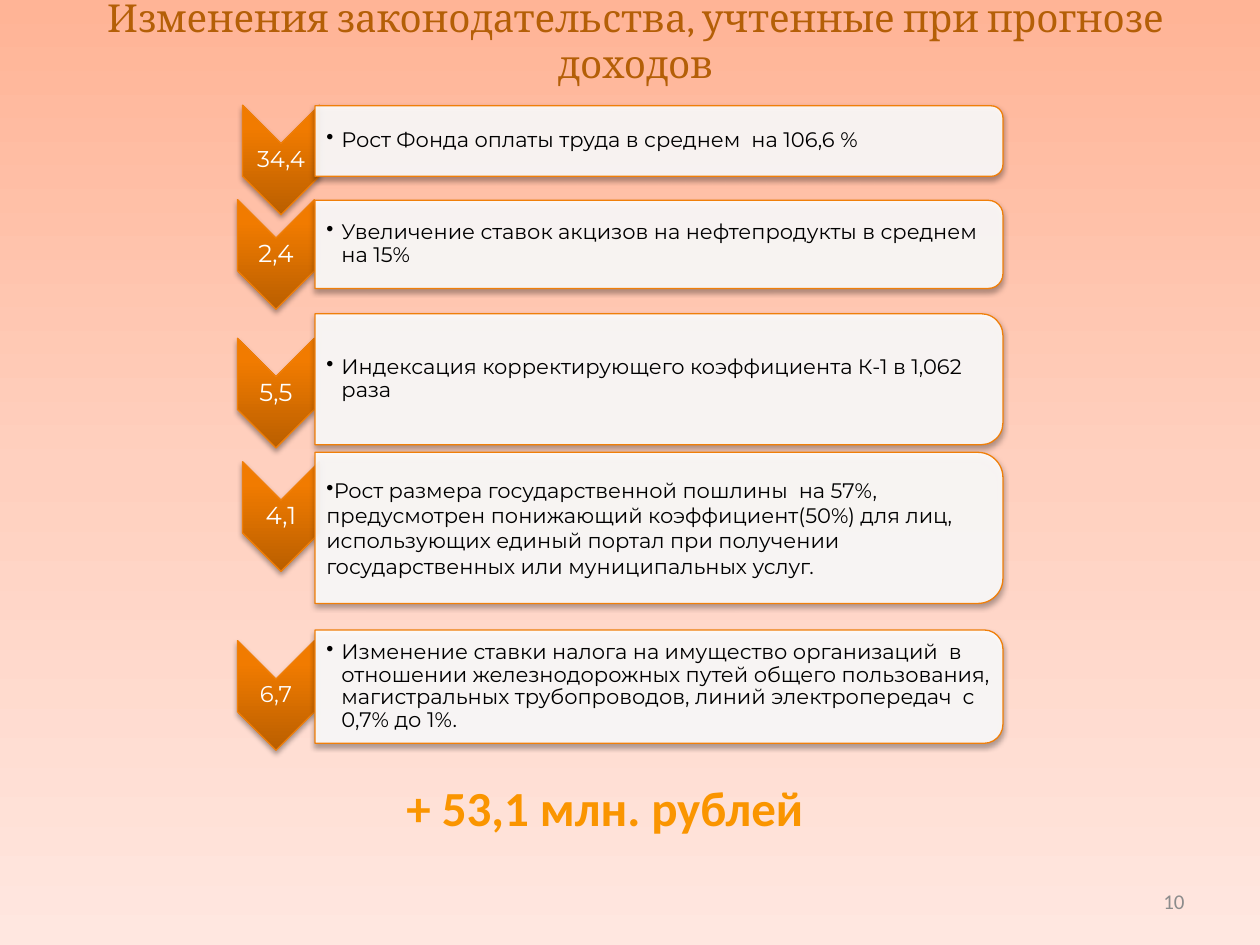
from lxml import etree
from pptx import Presentation
from pptx.dml.color import RGBColor
from pptx.enum.shapes import MSO_SHAPE
from pptx.enum.text import MSO_ANCHOR, PP_ALIGN
from pptx.oxml.ns import qn
from pptx.util import Inches, Pt

CHEVRON, ROUND_BOX = MSO_SHAPE.CHEVRON, MSO_SHAPE.ROUND_2_SAME_RECTANGLE
LEFT, CENTER, RIGHT = PP_ALIGN.LEFT, PP_ALIGN.CENTER, PP_ALIGN.RIGHT
TOP, MIDDLE = MSO_ANCHOR.TOP, MSO_ANCHOR.MIDDLE

ORANGE, WHITE, BLACK = "F07F09", "FFFFFF", "000000"
CHEVRON_STOPS = [(0, "BA5F00"), (80, "F17B00"), (100, "F27C00")]
BACKGROUND_STOPS = [(0, "FFB496"), (50, "FFD0BF"), (100, "FFE7E0")]

CHEVRON_LENGTH, CHEVRON_WIDTH = 0.87, 0.61
BOX_LEFT, BOX_WIDTH = 2.5, 5.46
TIGHT = (0.01, 0.01, 0.01, 0.01)
BOX_INSETS = (0.09, 0.01, 0.01, 0.01)
NORMAL_INSETS = (0.1, 0.05, 0.1, 0.05)

# amount, its size, chevron centre x and y, box centre y, box height, hanging bullet, text
CHANGES = [
    ("34,4", 13, 2.23, 1.27, 1.12, 0.56, True,
     "Рост Фонда оплаты труда в среднем  на 106,6 %"),
    ("2,4", 14, 2.19, 2.02, 1.94, 0.7, True,
     "Увеличение ставок акцизов на нефтепродукты в среднем на 15%"),
    ("5,5", 14, 2.19, 3.12, 3.01, 1.04, True,
     "Индексация корректирующего коэффициента К-1 в 1,062 раза"),
    ("4,1", 14, 2.23, 4.1, 4.19, 1.2, False,
     "Рост размера государственной пошлины  на 57%, предусмотрен понижающий "
     "коэффициент(50%) для лиц,  использующих единый портал при получении "
     "государственных или муниципальных услуг."),
    ("6,7", 13, 2.19, 5.52, 5.45, 0.9, True,
     "Изменение ставки налога на имущество организаций  в отношении "
     "железнодорожных путей общего пользования, магистральных трубопроводов, "
     "линий электропередач  с 0,7% до 1%."),
]


def rgb(color):
    return RGBColor.from_string(color)


def add_xml(parent, tag, **attrs):
    return etree.SubElement(parent, qn(tag), attrs)


def set_gradient(fill, parent, stops, angle):
    """Replace the solid fill under parent with a gradient that ignores rotation."""
    fill.solid()
    solid = parent.find(qn("a:solidFill"))
    grad = etree.Element(qn("a:gradFill"), rotWithShape="0")
    gs_list = add_xml(grad, "a:gsLst")
    for position, color in stops:
        gs = add_xml(gs_list, "a:gs", pos=str(position * 1000))
        add_xml(gs, "a:srgbClr", val=color)
    add_xml(grad, "a:lin", ang=str(angle * 60000), scaled="0")
    parent.replace(solid, grad)


def add_shadow(shape):
    shape.shadow.inherit = False
    effects = shape._element.spPr.find(qn("a:effectLst"))
    shadow = add_xml(effects, "a:outerShdw", blurRad=str(Pt(3.1)), dist=str(Pt(1.8)),
                     dir="5400000", rotWithShape="0")
    add_xml(add_xml(shadow, "a:srgbClr", val=BLACK), "a:alpha", val="35000")


def add_turned_shape(s, kind, cx, cy, width, height):
    """Add a shape turned by 90 degrees; width and height are those before turning."""
    shape = s.shapes.add_shape(kind, Inches(cx - width / 2), Inches(cy - height / 2),
                               Inches(width), Inches(height))
    shape.rotation = 90
    shape.line.color.rgb = rgb(ORANGE)
    shape.line.width = Pt(0.75)
    add_shadow(shape)
    return shape


def write_text(sp, text, size, font, color, align=LEFT, anchor=MIDDLE,
               insets=NORMAL_INSETS, bold=False, spacing=1.0):
    tf = sp.text_frame
    margins = ("margin_left", "margin_top", "margin_right", "margin_bottom")
    frame_format = dict(zip(margins, map(Inches, insets)))
    frame_format.update(word_wrap=True, vertical_anchor=anchor)
    for name, value in frame_format.items():
        setattr(tf, name, value)
    p = tf.paragraphs[0]
    p.alignment, p.line_spacing = align, spacing
    r = p.add_run()
    r.text = text
    for name, value in {"size": Pt(size), "name": font, "bold": bold}.items():
        setattr(r.font, name, value)
    r.font.color.rgb = rgb(color)
    return p


def add_text(s, left, top, width, height, *args, **text_format):
    sp = s.shapes.add_textbox(*map(Inches, (left, top, width, height)))
    return write_text(sp, *args, **text_format)


def add_bullet(p, indent):
    pPr = p._p.get_or_add_pPr()
    pPr.set("marL", str(Inches(indent)))
    pPr.set("indent", str(-Inches(indent)))
    add_xml(pPr, "a:buChar", char="•")


def add_amount(s, amount, size, cx, cy):
    chevron = add_turned_shape(s, CHEVRON, cx, cy, CHEVRON_LENGTH, CHEVRON_WIDTH)
    set_gradient(chevron.fill, chevron._element.spPr, CHEVRON_STOPS, 270)
    add_text(s, cx - CHEVRON_WIDTH / 2, cy - 0.13, CHEVRON_WIDTH, 0.26,
             amount, size, "Montserrat", WHITE, align=CENTER, insets=TIGHT, spacing=0.9)


def add_description(s, text, cy, height, hanging):
    box = add_turned_shape(s, ROUND_BOX, BOX_LEFT + BOX_WIDTH / 2, cy, height, BOX_WIDTH)
    box.fill.solid()
    box.fill.fore_color.rgb = rgb(WHITE)
    color = box._element.spPr.find(qn("a:solidFill"))[0]
    add_xml(color, "a:alpha", val="90000")
    text_height = 0.91 * height
    p = add_text(s, BOX_LEFT, cy - text_height / 2, BOX_WIDTH - 0.05 * height, text_height,
                 text, 12, "Montserrat", BLACK, insets=BOX_INSETS,
                 spacing=0.9 if hanging else 1.0)
    add_bullet(p, 0.12 if hanging else 0)


def add_title(s, text):
    title = s.shapes.title
    title.left, title.top, title.width, title.height = map(Inches, (0.24, 0.13, 9.61, 0.38))
    write_text(title, text, 22, "Cambria", "B45F07", align=CENTER)


def main():
    prs = Presentation()
    prs.slide_width, prs.slide_height = Inches(10), Inches(7.5)
    s = prs.slides.add_slide(prs.slide_layouts[5])
    fill = s.background.fill
    fill.solid()
    set_gradient(fill, s._element.cSld.find(qn("p:bg")).find(qn("p:bgPr")),
                 BACKGROUND_STOPS, 90)

    add_title(s, "Изменения законодательства, учтенные при прогнозе доходов")
    for amount, size, cx, cy, box_cy, height, hanging, text in CHANGES:
        add_amount(s, amount, size, cx, cy)
        add_description(s, text, box_cy, height, hanging)
    add_text(s, 1.61, 6.12, 6.38, 0.57, "+ 53,1 млн. рублей", 28, "Calibri", "FA9500",
             align=CENTER, anchor=TOP, bold=True)
    add_text(s, 7.17, 6.95, 2.33, 0.4, "10", 12, "Calibri", "8C8C8C", align=RIGHT)
    prs.save("out.pptx")


if __name__ == "__main__":
    main()
